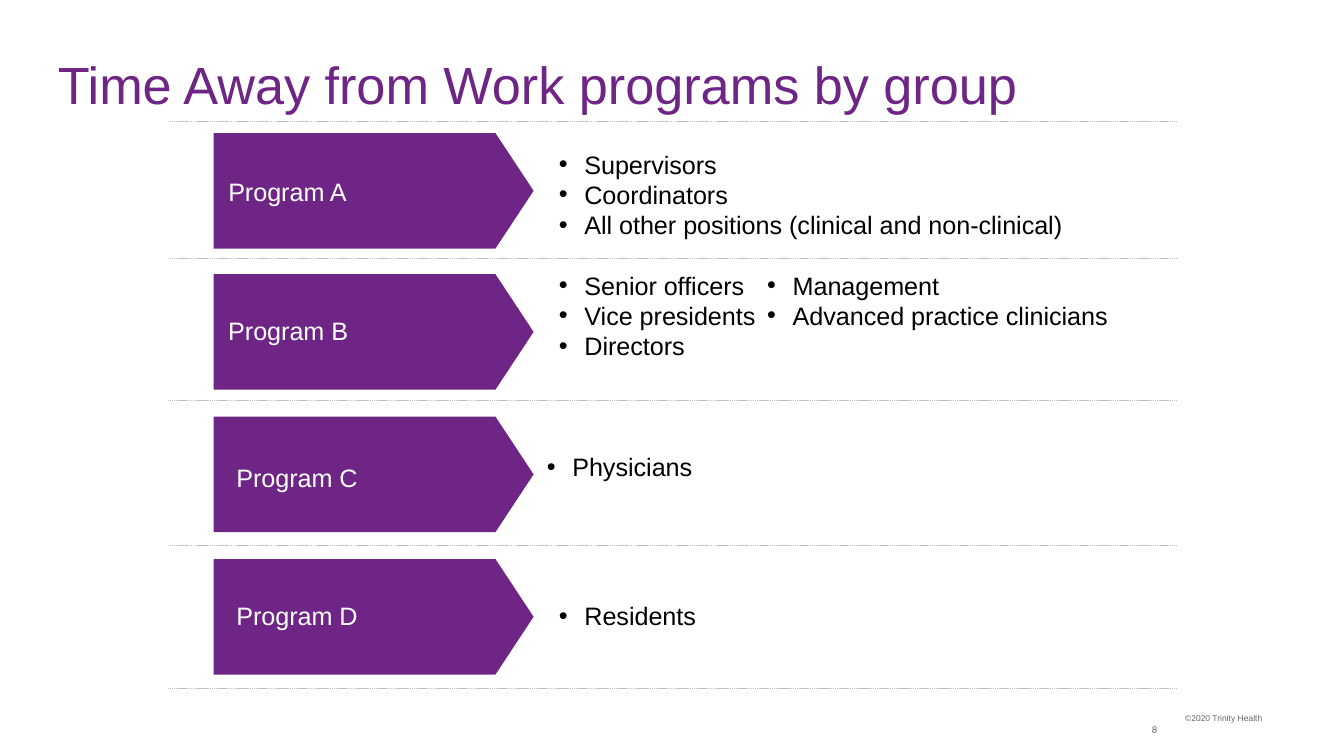
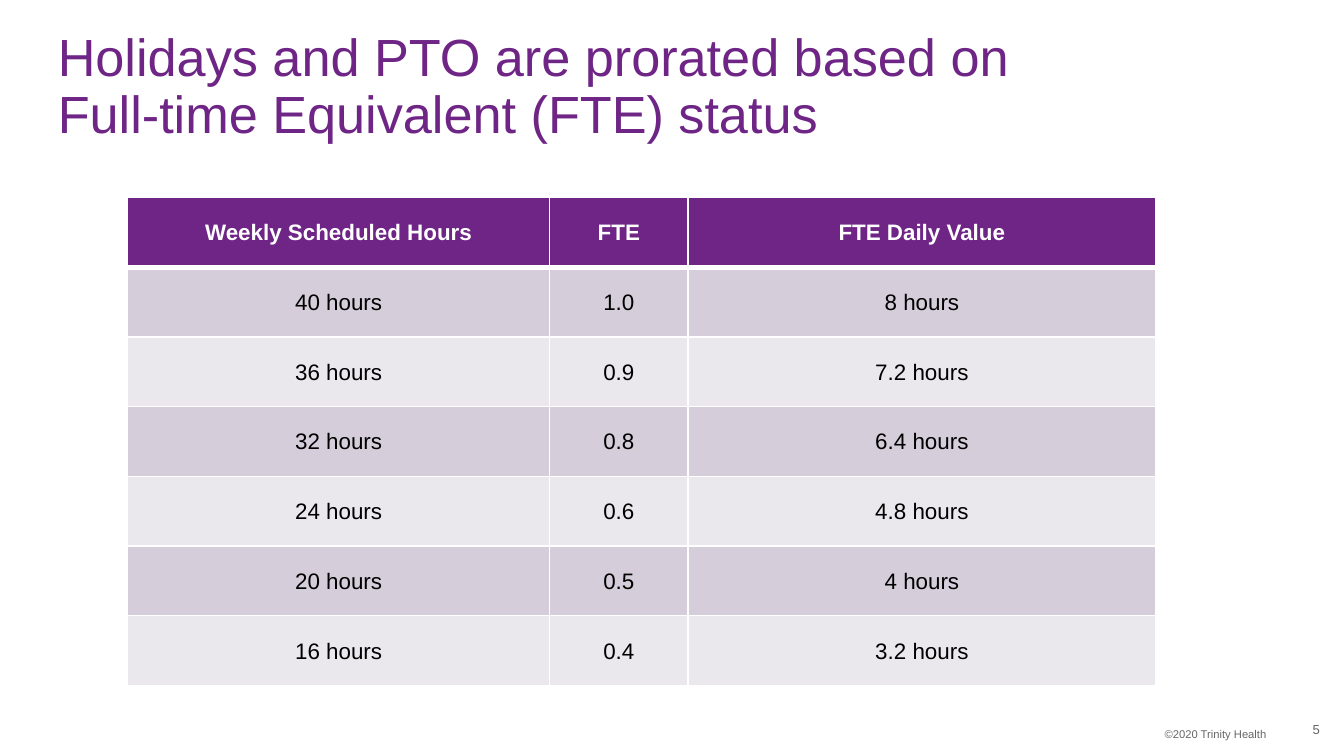
from lxml.etree import SubElement
from pptx import Presentation
from pptx.dml.color import RGBColor
from pptx.enum.dml import MSO_LINE
from pptx.enum.shapes import MSO_CONNECTOR, MSO_SHAPE
from pptx.enum.text import MSO_ANCHOR, MSO_AUTO_SIZE, PP_ALIGN
from pptx.oxml.ns import qn
from pptx.util import Inches, Pt

PURPLE = RGBColor(0x6E, 0x25, 0x85)
WHITE = RGBColor(0xFF, 0xFF, 0xFF)
BLACK = RGBColor(0x00, 0x00, 0x00)
GRAY = RGBColor(0x66, 0x66, 0x66)
RULE_GRAY = RGBColor(0xBF, 0xBF, 0xBF)
DARK_BAND = RGBColor(0xD5, 0xCD, 0xD9)
LIGHT_BAND = RGBColor(0xEB, 0xE8, 0xED)
FONT = "Arial"


def add_text(page, area, lines, size, color, align=PP_ALIGN.LEFT, bulleted=False):
    """Add a text box at area (left, top, width, height in inches), one paragraph a line."""
    box = page.shapes.add_textbox(*map(Inches, area))
    frame = box.text_frame
    frame.word_wrap = True
    frame.text = "\n".join(lines)
    for paragraph in frame.paragraphs:
        if bulleted:
            properties = paragraph._p.get_or_add_pPr()
            properties.set("marL", str(Inches(0.19)))
            properties.set("indent", str(-Inches(0.19)))
            SubElement(properties, qn("a:buFont"), typeface=FONT)
            SubElement(properties, qn("a:buChar"), char="•")
        paragraph.alignment = align
        paragraph.font.name = FONT
        paragraph.font.size = Pt(size)
        paragraph.font.color.rgb = color
    return box


def add_page(title_text, copyright_area, copyright_size, number, number_area, number_size):
    """Add a slide with its title, copyright line and page number."""
    page = deck.slides.add_slide(deck.slide_layouts.get_by_name("Title Only"))
    title = page.shapes.title
    title.left, title.top, title.width, title.height = map(Inches, (0.43, 0.38, 9, 0.55))
    frame = title.text_frame
    frame.text = title_text
    frame.auto_size = MSO_AUTO_SIZE.NONE
    frame.vertical_anchor = MSO_ANCHOR.MIDDLE
    frame.margin_left = frame.margin_top = frame.margin_right = frame.margin_bottom = 0
    paragraph = frame.paragraphs[0]
    paragraph.alignment = PP_ALIGN.LEFT
    paragraph.line_spacing = 0.9
    paragraph.font.name = FONT
    paragraph.font.size = Pt(28)
    paragraph.font.color.rgb = PURPLE

    add_text(page, copyright_area, ["©2020 Trinity Health"], copyright_size, GRAY, PP_ALIGN.RIGHT)
    number_box = add_text(page, number_area, [number], number_size, GRAY, PP_ALIGN.RIGHT)
    number_box.text_frame.vertical_anchor = MSO_ANCHOR.MIDDLE
    number_box.text_frame.margin_right = 0
    return page


deck = Presentation()
deck.slide_width = Inches(10)
deck.slide_height = deck.slide_width * 9 // 16

# Programs by group
page = add_page("Time Away from Work programs by group",
                (6.34, 5.26, 3.15, 0.2), 4.5, "8", (8.28, 5.28, 0.33, 0.3), 5.2)

for rule_top in (0.9, 1.92, 2.98, 4.06, 5.12):
    rule = page.shapes.add_connector(MSO_CONNECTOR.STRAIGHT, Inches(1.25), Inches(rule_top),
                                     Inches(8.75), Inches(rule_top))
    rule.line.color.rgb = RULE_GRAY
    rule.line.width = Pt(0.25)
    rule.line.dash_style = MSO_LINE.SQUARE_DOT
    SubElement(rule._element.spPr, qn("a:effectLst"))

# Name, arrow top, label left, top and width
programs = [
    ("Program A", 0.99, 1.6, 1.26, 2.28),
    ("Program B", 2.04, 1.6, 2.3, 2.73),
    ("Program C", 3.1, 1.66, 3.39, 2.12),
    ("Program D", 4.16, 1.66, 4.42, 1.92),
]
for name, arrow_top, label_left, label_top, label_width in programs:
    arrow = page.shapes.add_shape(MSO_SHAPE.PENTAGON, Inches(1.59), Inches(arrow_top),
                                  Inches(2.38), Inches(0.86))
    arrow.adjustments[0] = 0.33
    arrow.shadow.inherit = False
    arrow.fill.solid()
    arrow.fill.fore_color.rgb = PURPLE
    arrow.line.fill.background()
    add_text(page, (label_left, label_top, label_width, 0.33), [name], 13.5, WHITE)

groups = [
    ((4.06, 1.06, 4.33, 0.78),
     ["Supervisors", "Coordinators", "All other positions (clinical and non-clinical)"]),
    ((4.06, 1.96, 2.28, 0.78), ["Senior officers", "Vice presidents", "Directors"]),
    ((5.61, 1.96, 2.78, 0.56), ["Management", "Advanced practice clinicians"]),
    ((3.97, 3.31, 4.51, 0.33), ["Physicians"]),
    ((4.06, 4.42, 4.41, 0.33), ["Residents"]),
]
for area, positions in groups:
    add_text(page, area, positions, 13.5, BLACK, bulleted=True)

# Prorated hours
page = add_page("Holidays and PTO are prorated based on \vFull-time Equivalent (FTE) status",
                (5.33, 5.36, 4.19, 0.2), 6, "5", (9.38, 5.28, 0.44, 0.3), 7)

rows = [
    ("Weekly Scheduled Hours", "FTE", "FTE Daily Value"),
    ("40 hours", "1.0", "8 hours"),
    ("36 hours", "0.9", "7.2 hours"),
    ("32 hours", "0.8", "6.4 hours"),
    ("24 hours", "0.6", "4.8 hours"),
    ("20 hours", "0.5", "4 hours"),
    ("16 hours", "0.4", "3.2 hours"),
]
table = page.shapes.add_table(len(rows), 3, Inches(0.95), Inches(1.47),
                              Inches(7.65), Inches(3.63)).table
for column, width in zip(table.columns, (3.14, 1.03, 3.48)):
    column.width = Inches(width)

for row_index, values in enumerate(rows):
    is_header = row_index == 0
    border_widths = {"L": 1, "R": 1, "T": 3 if row_index == 1 else 1, "B": 3 if is_header else 1}
    for column_index, value in enumerate(values):
        cell = table.cell(row_index, column_index)
        properties = cell._tc.get_or_add_tcPr()
        for side, width in border_widths.items():
            border = SubElement(properties, qn(f"a:ln{side}"), w=str(Pt(width)))
            SubElement(SubElement(border, qn("a:solidFill")), qn("a:srgbClr"), val=str(WHITE))
        cell.fill.solid()
        cell.fill.fore_color.rgb = (PURPLE if is_header
                                    else DARK_BAND if row_index % 2 else LIGHT_BAND)
        cell.vertical_anchor = MSO_ANCHOR.MIDDLE
        cell.margin_left = cell.margin_top = cell.margin_right = Inches(0.01)
        cell.margin_bottom = 0
        cell.text = value
        paragraph = cell.text_frame.paragraphs[0]
        paragraph.alignment = PP_ALIGN.CENTER
        paragraph.font.name = FONT
        paragraph.font.size = Pt(12)
        paragraph.font.bold = is_header
        paragraph.font.color.rgb = WHITE if is_header else BLACK

deck.save("out.pptx")
